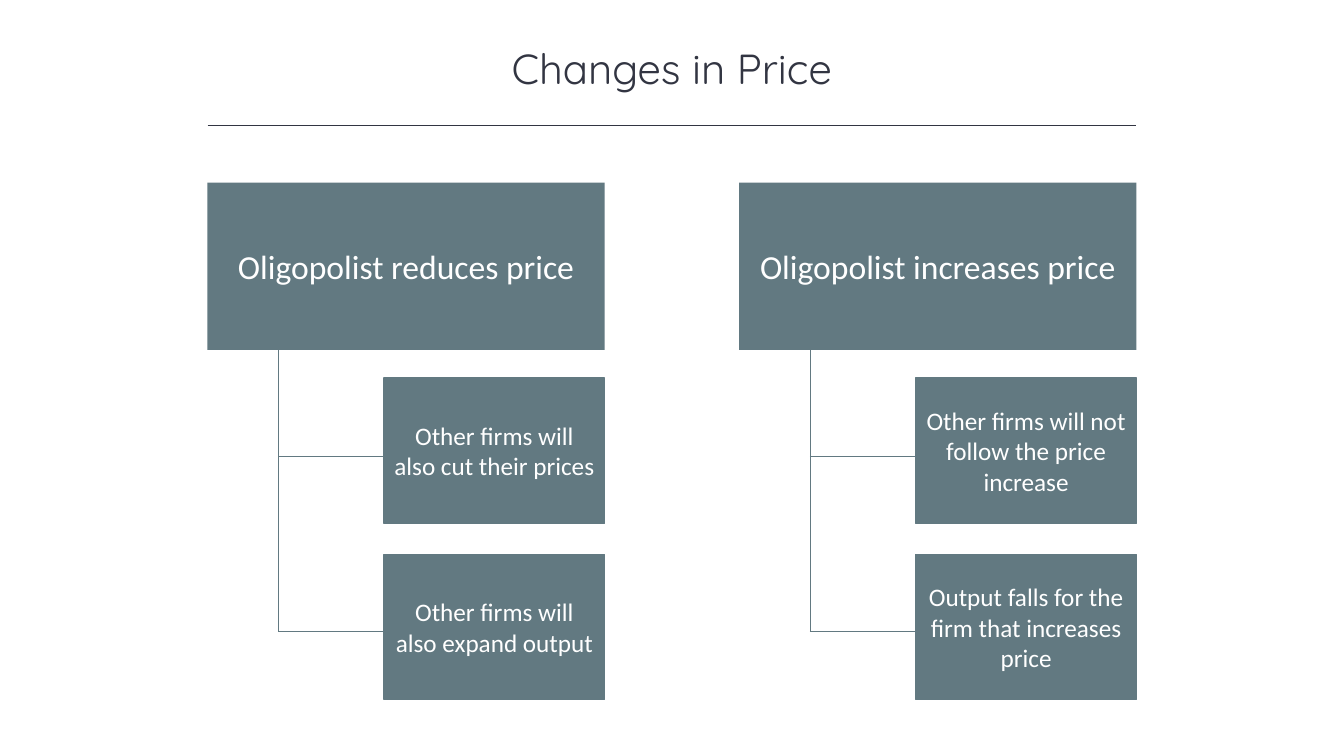
from dataclasses import dataclass

from pptx import Presentation
from pptx.dml.color import RGBColor
from pptx.enum.shapes import MSO_CONNECTOR as CONN, MSO_SHAPE as SHAPE
from pptx.enum.text import MSO_ANCHOR as ANCHOR, PP_ALIGN as ALIGN
from pptx.oxml.xmlchemy import OxmlElement
from pptx.util import Cm, Pt


@dataclass(frozen=True)
class Theme:
    """Colours, fonts and type sizes."""
    ink: RGBColor = RGBColor.from_string("323542")
    slate: RGBColor = RGBColor.from_string("627981")
    white: RGBColor = RGBColor.from_string("FFFFFF")
    heading_font: str = "Quicksand"
    body_font: str = "Calibri"
    title_size: int = 30
    head_size: int = 24
    child_size: int = 18


def write(tf, text, *, size, font, color, inset=0.24):
    """Put centred text in a frame."""
    tf.word_wrap = True
    tf.vertical_anchor = ANCHOR.MIDDLE
    tf.margin_left = tf.margin_right = Cm(inset)
    tf.margin_top = tf.margin_bottom = Cm(0.13)
    p = tf.paragraphs[0]
    p.alignment = ALIGN.CENTER
    r = p.add_run()
    r.text = text
    r.font.size = Pt(size)
    r.font.name = font
    r.font.color.rgb = color


class SlideBuilder:
    """Draws styled elements on one slide."""

    def __init__(self, prs, theme):
        self.theme = theme
        self.s = prs.slides.add_slide(prs.slide_layouts[5])

    def title(self, text, x, y, w, h):
        sp = self.s.shapes.title
        sp.left, sp.top, sp.width, sp.height = Cm(x), Cm(y), Cm(w), Cm(h)
        t = self.theme
        write(sp.text_frame, text, size=t.title_size, font=t.heading_font, color=t.ink)

    def line(self, x1, y1, x2, y2, color, width=0.5):
        cx = self.s.shapes.add_connector(CONN.STRAIGHT, Cm(x1), Cm(y1), Cm(x2), Cm(y2))
        cx.line.color.rgb = color
        cx.line.width = Pt(width)
        cx._element.spPr.append(OxmlElement("a:effectLst"))

    def box(self, text, x, y, w, h, size, outlined=False):
        t = self.theme
        sp = self.s.shapes.add_shape(SHAPE.RECTANGLE, Cm(x), Cm(y), Cm(w), Cm(h))
        sp.shadow.inherit = False
        sp.fill.solid()
        sp.fill.fore_color.rgb = t.slate
        if outlined:
            sp.line.color.rgb = t.slate
            sp.line.width = Pt(1)
        else:
            sp.line.fill.background()
        write(sp.text_frame, text, size=size, font=t.body_font, color=t.white)

    def tree(self, x, head, children):
        t = self.theme
        top, head_w, head_h = 4.6, 10.01, 4.22
        child_w, child_h = 5.56, 3.66
        trunk, child_x = x + 1.78, x + head_w - child_w
        joints = [11.51, 15.9]
        self.box(head, x, top, head_w, head_h, t.head_size)
        self.line(trunk, top + head_h, trunk, joints[-1], t.slate)
        for y in joints:
            self.line(trunk, y, child_x, y, t.slate)
        for i, text in enumerate(children):
            self.box(text, child_x, 9.53 + i * 4.44, child_w, child_h, t.child_size, outlined=True)


def main():
    prs = Presentation()
    prs.slide_width, prs.slide_height = Cm(33.87), Cm(19.05)
    theme = Theme()
    slide = SlideBuilder(prs, theme)
    slide.title("Changes in Price", 4.23, 0.94, 25.4, 1.55)
    left, pitch = 5.23, 13.4
    slide.line(left, 3.16, 28.64, 3.16, theme.ink, width=1)
    trees = [
        ("Oligopolist reduces price",
         ["Other firms will also cut their prices",
          "Other firms will also expand output"]),
        ("Oligopolist increases price",
         ["Other firms will not follow the price increase",
          "Output falls for the firm that increases price"]),
    ]
    for i, (head, children) in enumerate(trees):
        slide.tree(left + i * pitch, head, children)
    prs.save("out.pptx")


if __name__ == "__main__":
    main()
